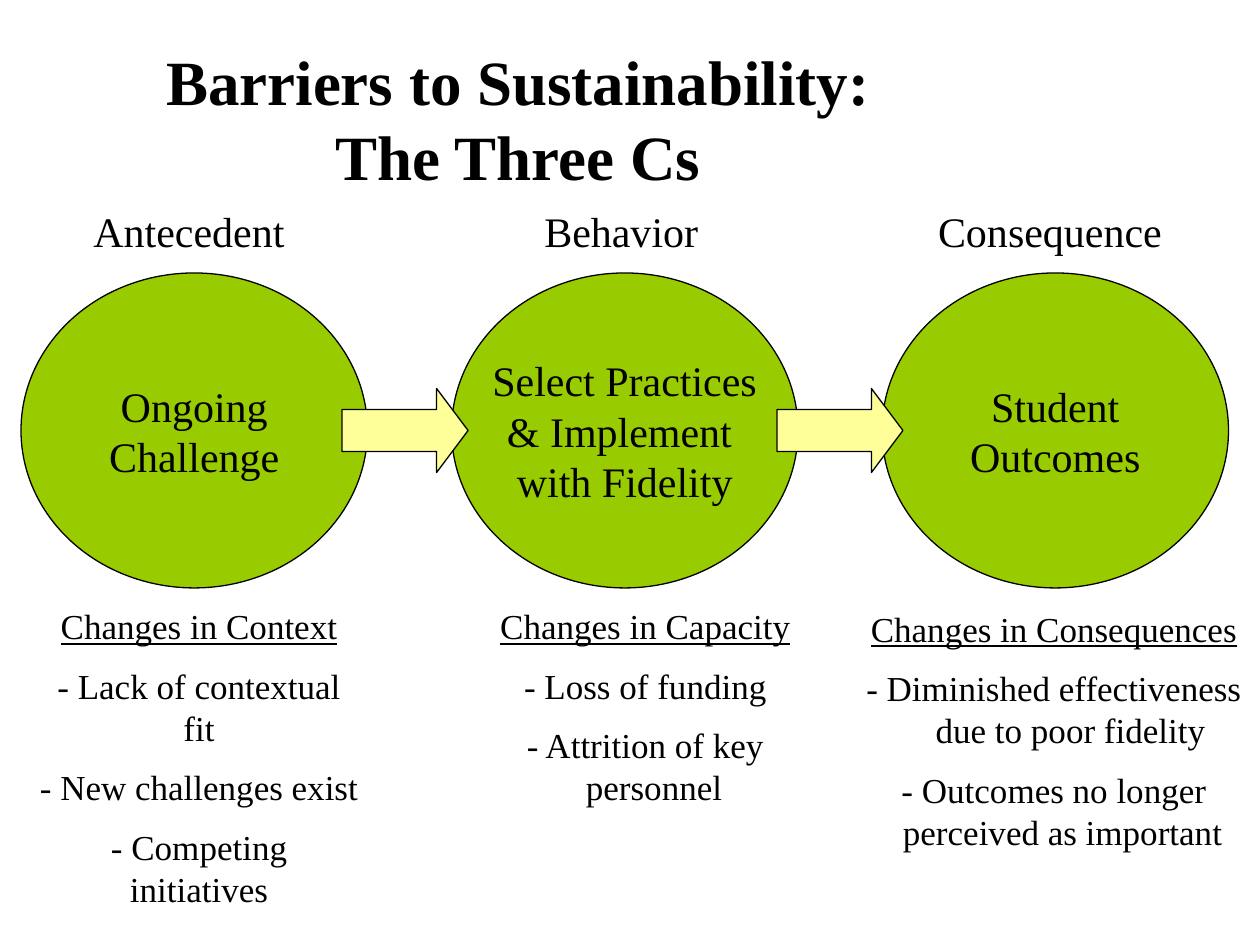
from pptx import Presentation
from pptx.dml.color import RGBColor
from pptx.enum.shapes import MSO_SHAPE
from pptx.enum.text import MSO_ANCHOR, PP_ALIGN
from pptx.util import Pt

OVAL, ARROW = MSO_SHAPE.OVAL, MSO_SHAPE.RIGHT_ARROW
MIDDLE, CENTER = MSO_ANCHOR.MIDDLE, PP_ALIGN.CENTER
FONT = "Times New Roman"
COLORS = {"circle": "99CC00", "arrow": "FFFF99", "ink": "000000"}

deck = Presentation()
deck.slide_width, deck.slide_height = Pt(720), Pt(540)
page = deck.slides.add_slide(deck.slide_layouts[6])


def add_figure(kind, left, top, width, height, color):
    figure = page.shapes.add_shape(kind, Pt(left), Pt(top), Pt(width), Pt(height))
    figure.shadow.inherit = False
    figure.fill.solid()
    figure.fill.fore_color.rgb = RGBColor.from_string(COLORS[color])
    figure.line.color.rgb = RGBColor.from_string(COLORS["ink"])
    figure.line.width = Pt(0.75)
    return figure


def write_lines(frame, lines, size, gap=0):
    for index, line in enumerate(lines):
        para = frame.paragraphs[0] if index == 0 else frame.add_paragraph()
        para.text = line
        para.alignment = CENTER
        para.space_before = Pt(gap if index else 0)
        para.font.name = FONT
        para.font.size = Pt(size)
        para.font.color.rgb = RGBColor.from_string(COLORS["ink"])


circles = [
    ["Ongoing", "Challenge"],
    ["Select Practices", "& Implement ", "with Fidelity"],
    ["Student", "Outcomes"],
]
for column, lines in enumerate(circles):
    circle = add_figure(OVAL, 12 + 246 * column, 156, 198, 180, "circle")
    circle.text_frame.word_wrap = False
    circle.text_frame.vertical_anchor = MIDDLE
    write_lines(circle.text_frame, lines, 24)

for left in (195.5, 444):
    arrow = add_figure(ARROW, left, 222, 72, 48, "arrow")
    arrow.adjustments[0] = 0.5
    arrow.adjustments[1] = 0.375

headings = [("Antecedent", 36, 144), ("Behavior", 292, 126), ("Consequence", 513, 174)]
for heading, left, width in headings:
    box = page.shapes.add_textbox(Pt(left), Pt(114), Pt(width), Pt(36))
    box.text_frame.word_wrap = True
    write_lines(box.text_frame, [heading], 24)

title = page.shapes.add_textbox(Pt(35.5), Pt(24), Pt(658), Pt(87))
title.text_frame.word_wrap = True
title.text_frame.margin_top = title.text_frame.margin_bottom = 0
write_lines(title.text_frame, ["Barriers to Sustainability:", "The Three Cs"], 36)
for para in title.text_frame.paragraphs:
    para.font.bold = True
title.text_frame.paragraphs[0]._p.get_or_add_pPr().set("marR", str(Pt(137)))

barriers = [
    (15, 342, 197.5, [
        ("Changes in Context", 0),
        ("- Lack of contextual fit", 0),
        ("- New challenges exist", 0),
        ("- Competing initiatives", 0),
    ]),
    (269.5, 342, 198.5, [
        ("Changes in Capacity", 0),
        ("- Loss of funding", 0),
        ("- Attrition of key personnel", 10),
    ]),
    (484.5, 343.5, 235.5, [
        ("Changes in Consequences", 0),
        ("- Diminished effectiveness due to poor fidelity", 19),
        ("- Outcomes no longer perceived as important", 10),
    ]),
]
for left, top, width, items in barriers:
    box = page.shapes.add_textbox(Pt(left), Pt(top), Pt(width), Pt(140))
    box.text_frame.word_wrap = True
    write_lines(box.text_frame, [text for text, hanging in items], 20, gap=10)
    box.text_frame.paragraphs[0].font.underline = True
    for para, (text, hanging) in zip(box.text_frame.paragraphs, items):
        if hanging:
            properties = para._p.get_or_add_pPr()
            properties.set("marL", str(Pt(hanging)))
            properties.set("indent", str(-Pt(hanging)))

deck.save("out.pptx")
